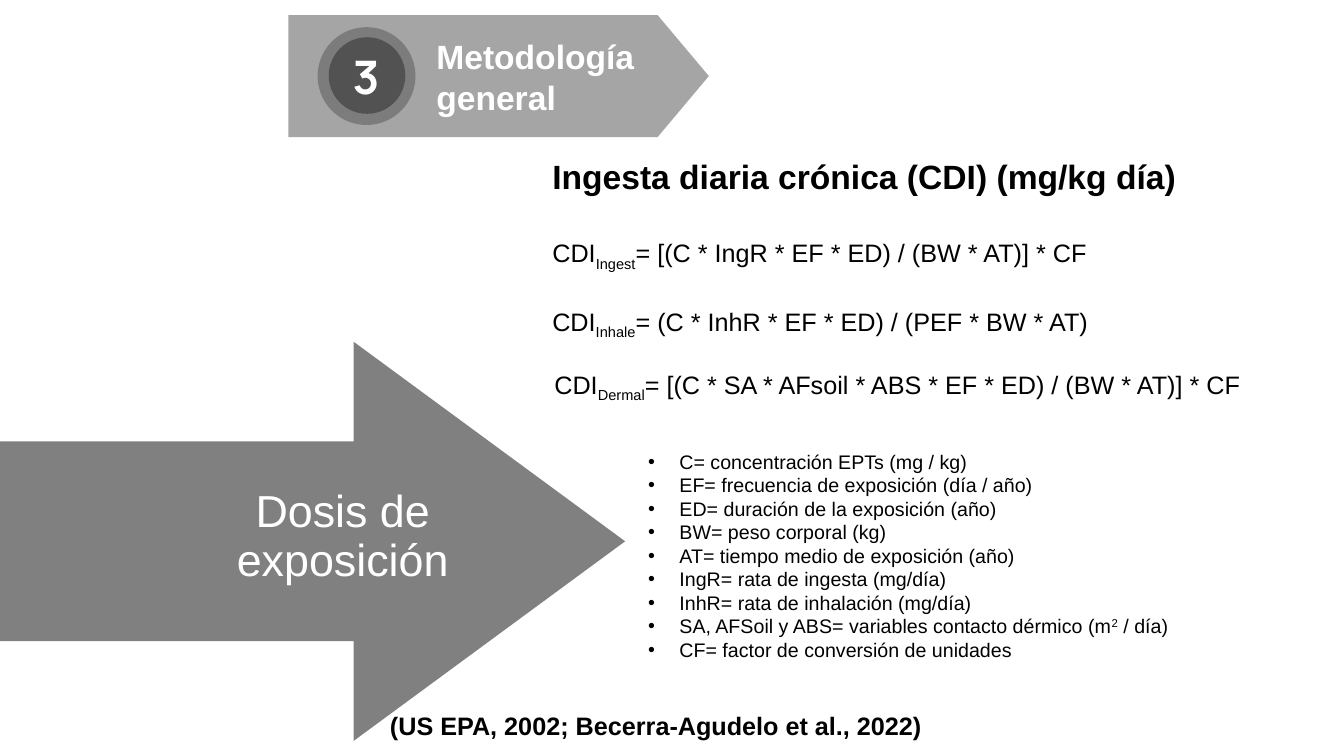
from dataclasses import dataclass
from typing import NamedTuple

from lxml.etree import SubElement
from pptx import Presentation
from pptx.dml.color import RGBColor
from pptx.enum.shapes import MSO_SHAPE
from pptx.enum.text import MSO_ANCHOR, MSO_AUTO_SIZE, PP_ALIGN
from pptx.oxml.ns import qn
from pptx.util import Emu, Inches, Pt


@dataclass(frozen=True)
class Theme:
    ink: str = "000000"
    paper: str = "FFFFFF"
    banner: str = "A5A5A5"
    ring: str = "7C7C7C"
    core: str = "525252"
    arrow: str = "808080"
    font: str = "Arial"
    number_font: str = "Manrope"
    number: float = 33
    label: float = 32
    title: float = 24
    body: float = 18
    legend: float = 14


class Box(NamedTuple):
    """Left, top, width and height as percentages of the slide."""
    x: float
    y: float
    w: float
    h: float


class Figure(NamedTuple):
    kind: MSO_SHAPE
    box: Box
    color: str
    adjustments: tuple = ()
    rotation: float = 0


class Formula(NamedTuple):
    box: Box
    text: str


T = Theme()
WIDTH, HEIGHT = Inches(13.33), Inches(7.5)
BASELINES = {"_": "-25000", "^": "30000"}

FORMULAS = [
    Formula(Box(40.36, 30.8, 44.86, 5.33), "CDI|_Ingest|= [(C * IngR * EF * ED) / (BW * AT)] * CF"),
    Formula(Box(40.36, 39.87, 45.16, 5.33), "CDI|_Inhale|= (C * InhR * EF * ED) / (PEF * BW * AT)"),
    Formula(Box(40.51, 48.13, 54.61, 5.33),
            "CDI|_Dermal|= [(C * SA * AFsoil * ABS * EF * ED) / (BW * AT)] * CF"),
]
LEGEND = [
    "C= concentración EPTs (mg / kg)",
    "EF= frecuencia de exposición (día / año)",
    "ED= duración de la exposición (año)",
    "BW= peso corporal (kg)",
    "AT= tiempo medio de exposición (año)",
    "IngR= rata de ingesta (mg/día)",
    "InhR= rata de inhalación (mg/día)",
    "SA, AFSoil y ABS= variables contacto dérmico (m|^2| / día)",
    "CF= factor de conversión de unidades",
]
FIGURES = [
    Figure(MSO_SHAPE.PENTAGON, Box(21.46, 2, 31.28, 16.13), T.banner, (0.42,)),
    Figure(MSO_SHAPE.OVAL, Box(23.63, 3.6, 7.28, 12.93), T.ring),
    Figure(MSO_SHAPE.OVAL, Box(24.46, 4.93, 5.7, 10.13), T.core),
    Figure(MSO_SHAPE.UP_ARROW, Box(8.4, 30.27, 29.71, 82.67), T.arrow, (0.5, 0.68), 90),
]


def place(box: Box) -> tuple:
    return (Emu(round(WIDTH * box.x / 100)), Emu(round(HEIGHT * box.y / 100)),
            Emu(round(WIDTH * box.w / 100)), Emu(round(HEIGHT * box.h / 100)))


def add_figure(s, figure: Figure) -> None:
    sp = s.shapes.add_shape(figure.kind, *place(figure.box))
    sp.shadow.inherit = False
    sp.fill.solid()
    sp.fill.fore_color.rgb = RGBColor.from_string(figure.color)
    sp.line.fill.background()
    sp.rotation = figure.rotation
    for i, value in enumerate(figure.adjustments):
        sp.adjustments[i] = value


def add_veil(sp) -> None:
    """Fill the box with half-transparent paper colour."""
    sp.fill.solid()
    sp.fill.fore_color.rgb = RGBColor.from_string(T.paper)
    color = sp.fill._xPr.find(qn("a:solidFill"))[0]
    SubElement(color, qn("a:alpha")).set("val", "50000")


def add_bullet(p) -> None:
    pPr = p._p.get_or_add_pPr()
    indent = Inches(0.31)
    pPr.set("marL", str(indent))
    pPr.set("indent", str(-indent))
    SubElement(pPr, qn("a:buFont")).set("typeface", T.font)
    SubElement(pPr, qn("a:buChar")).set("char", "•")


def add_text(s, box: Box, *paragraphs: str, size: float = T.body, color: str = T.ink,
             font: str = T.font, bold: bool = False, align=PP_ALIGN.LEFT,
             anchor=MSO_ANCHOR.TOP, wrap: bool = True, grow: bool = True,
             spacing=None, inset=None, bullets: bool = False, veil: bool = False) -> None:
    """Write paragraphs; "|" splits runs, and "_" or "^" lowers or raises one."""
    sp = s.shapes.add_textbox(*place(box))
    if veil:
        add_veil(sp)
    tf = sp.text_frame
    tf.word_wrap = wrap
    tf.vertical_anchor = anchor
    tf.auto_size = MSO_AUTO_SIZE.SHAPE_TO_FIT_TEXT if grow else MSO_AUTO_SIZE.NONE
    if inset is not None:
        tf.margin_left = tf.margin_top = tf.margin_right = tf.margin_bottom = inset
    for i, text in enumerate(paragraphs):
        p = tf.add_paragraph() if i else tf.paragraphs[0]
        p.alignment = align
        if spacing is not None:
            p.line_spacing = spacing
        if bullets:
            add_bullet(p)
        for part in text.split("|"):
            r = p.add_run()
            r.text = part.lstrip("_^")
            r.font.size = Pt(size)
            r.font.name = font
            r.font.bold = bold
            r.font.color.rgb = RGBColor.from_string(color)
            if part[0] in BASELINES:
                r._r.get_or_add_rPr().set("baseline", BASELINES[part[0]])


def main() -> None:
    prs = Presentation()
    prs.slide_width, prs.slide_height = WIDTH, HEIGHT
    s = prs.slides.add_slide(prs.slide_layouts[6])

    for figure in FIGURES:
        add_figure(s, figure)
    for formula in FORMULAS:
        add_text(s, formula.box, formula.text, veil=True)
    add_text(s, Box(28.28, 93.47, 49.96, 5.33), "(US EPA, 2002; Becerra-Agudelo et al., 2022)",
             bold=True, spacing=Pt(20.5))
    add_text(s, Box(40.36, 20, 49.96, 6.67), "Ingesta diaria crónica (CDI) (mg/kg día)",
             size=T.title, bold=True)
    add_text(s, Box(47.49, 58.8, 45.54, 29.6), *LEGEND, size=T.legend, bullets=True, veil=True)
    add_text(s, Box(25.43, 5.6, 3.6, 8.8), "3", size=T.number, font=T.number_font, bold=True,
             color=T.paper, align=PP_ALIGN.CENTER, anchor=MSO_ANCHOR.MIDDLE, wrap=False)
    add_text(s, Box(31.73, 4, 17.03, 12.13), "Metodología", "general", size=T.title, bold=True,
             color=T.paper, anchor=MSO_ANCHOR.BOTTOM, wrap=False)
    add_text(s, Box(15.98, 65.73, 19.05, 10.67), "Dosis de exposición", size=T.label,
             color=T.paper, align=PP_ALIGN.CENTER, anchor=MSO_ANCHOR.MIDDLE, grow=False,
             spacing=0.9, inset=Inches(0.16))
    prs.save("out.pptx")


if __name__ == "__main__":
    main()
